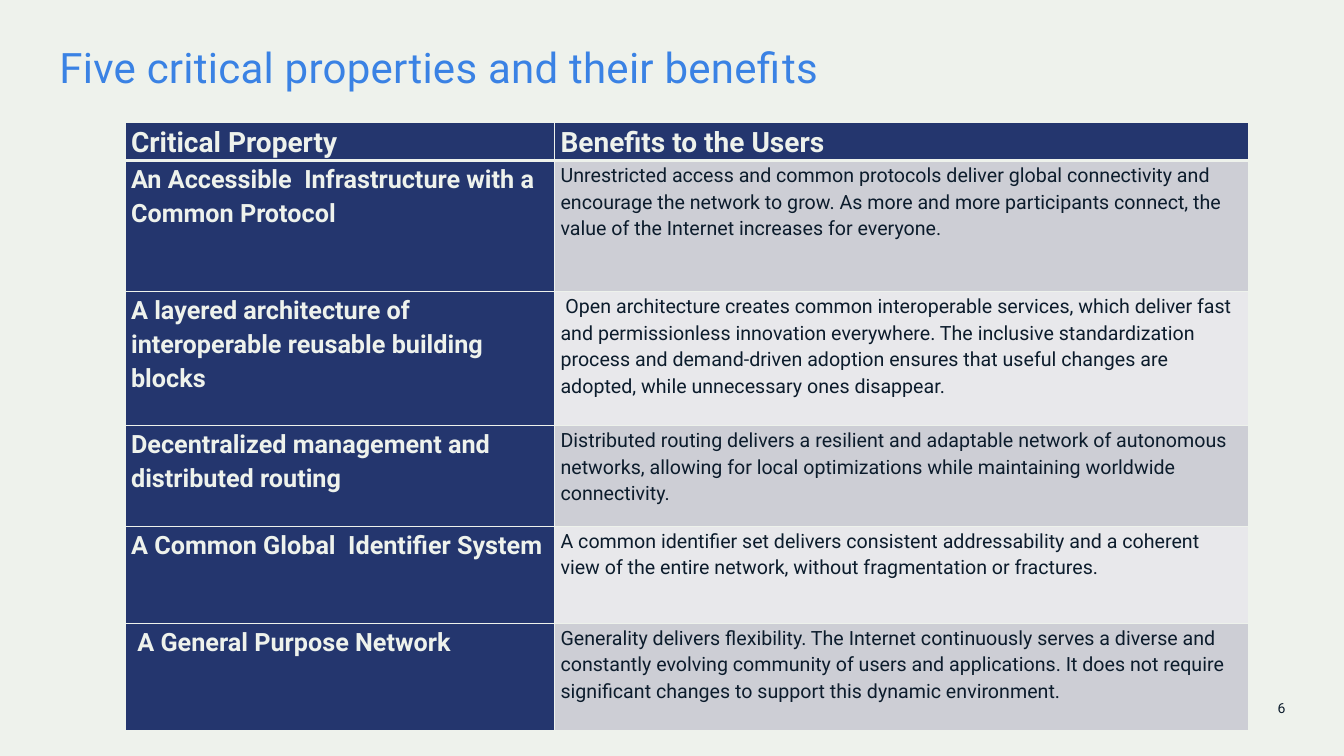
from lxml import etree
from pptx import Presentation
from pptx.dml.color import RGBColor
from pptx.enum.text import PP_ALIGN as Align
from pptx.oxml.ns import qn
from pptx.util import Inches, Pt

PAPER, NAVY, INK, BLUE = "EEF2EC", "24366E", "0C1C2C", "3A82E4"
BANDS = ("CDCED5", "E8E8EB")
FONT = "Roboto"
HEADER = ("Critical Property", "Benefits to the Users")
PROPERTIES = [
    ("An Accessible  Infrastructure with a Common Protocol",
     "Unrestricted access and common protocols deliver global connectivity and "
     "encourage the network to grow. As more and more participants connect, the "
     "value of the Internet increases for everyone."),
    ("A layered architecture of interoperable reusable building blocks",
     " Open architecture creates common interoperable services, which deliver fast "
     "and permissionless innovation everywhere. The inclusive standardization "
     "process and demand-driven adoption ensures that useful changes are "
     "adopted, while unnecessary ones disappear."),
    ("Decentralized management and distributed routing",
     "Distributed routing delivers a resilient and adaptable network of autonomous "
     "networks, allowing for local optimizations while maintaining worldwide "
     "connectivity."),
    ("A Common Global  Identifier System",
     "A common identifier set delivers consistent addressability and a coherent "
     "view of the entire network, without fragmentation or fractures."),
    (" A General Purpose Network",
     "Generality delivers flexibility. The Internet continuously serves a diverse and "
     "constantly evolving community of users and applications. It does not require "
     "significant changes to support this dynamic environment."),
]
COLUMN_WIDTHS = (4.26, 6.88)
ROW_HEIGHTS = (0.26, 1.3, 1.33, 1, 0.96, 1.06)


def rgb(color):
    return RGBColor.from_string(color)


def style(paragraph, size, color, bold=False, spacing=1.0):
    paragraph.line_spacing = spacing
    font = paragraph.font
    font.name, font.size, font.bold = FONT, Pt(size), bold
    font.color.rgb = rgb(color)


def add_line(slide, box, text, size, color, align=Align.LEFT, spacing=1.0):
    """Place one paragraph in a box without margins."""
    frame = slide.shapes.add_textbox(*map(Inches, box)).text_frame
    frame.word_wrap = True
    frame.margin_left = frame.margin_top = frame.margin_right = frame.margin_bottom = 0
    paragraph = frame.paragraphs[0]
    paragraph.text, paragraph.alignment = text, align
    style(paragraph, size, color, spacing=spacing)
    return paragraph


def add_title(slide, box):
    title = add_line(slide, box, "Five critical properties and their benefits",
                     30, BLUE, spacing=1.06)
    title.runs[0].font._element.set("spc", "20")


def set_borders(cell, bottom):
    """Draw the four cell borders; they must precede the fill in the XML."""
    properties = cell._tc.get_or_add_tcPr()
    widths = {"lnL": 1, "lnR": 1, "lnT": 1, "lnB": bottom}
    for index, (side, width) in enumerate(widths.items()):
        border = etree.Element(qn(f"a:{side}"), w=str(Pt(width)))
        fill = etree.SubElement(border, qn("a:solidFill"))
        etree.SubElement(fill, qn("a:srgbClr"), val=PAPER)
        properties.insert(index, border)


def fill_cell(cell, text, size, color, fill, bold, bottom):
    cell.margin_left = cell.margin_right = Inches(0.06)
    cell.margin_top = cell.margin_bottom = 0
    cell.text = text
    style(cell.text_frame.paragraphs[0], size, color, bold, 1.15)
    cell.fill.solid()
    cell.fill.fore_color.rgb = rgb(fill)
    set_borders(cell, bottom)


def add_benefits_table(slide, box):
    table = slide.shapes.add_table(len(ROW_HEIGHTS), len(COLUMN_WIDTHS),
                                   *map(Inches, box)).table
    for column, width in zip(table.columns, COLUMN_WIDTHS):
        column.width = Inches(width)
    for row, height in zip(table.rows, ROW_HEIGHTS):
        row.height = Inches(height)
    for column, heading in enumerate(HEADER):
        fill_cell(table.cell(0, column), heading, 20, PAPER, NAVY, True, 3)
    for row, (name, benefit) in enumerate(PROPERTIES, start=1):
        fill_cell(table.cell(row, 0), name, 18, PAPER, NAVY, True, 1)
        fill_cell(table.cell(row, 1), benefit, 14, INK, BANDS[(row - 1) % 2], False, 1)
    # The header's lower rule is shared with the first body row.
    for cell in table.rows[1].cells:
        cell._tc.tcPr.find(qn("a:lnT")).set("w", str(Pt(3)))


def main():
    deck = Presentation()
    deck.slide_width, deck.slide_height = Inches(13.33), Inches(7.5)
    slide = deck.slides.add_slide(deck.slide_layouts[6])
    slide.background.fill.solid()
    slide.background.fill.fore_color.rgb = rgb(PAPER)
    add_line(slide, (9.75, 6.94, 3, 0.19), "6", 10, INK, Align.RIGHT)
    add_title(slide, (0.59, 0.38, 12.16, 0.59))
    add_benefits_table(slide, (1.24, 1.21, sum(COLUMN_WIDTHS), sum(ROW_HEIGHTS)))
    deck.save("out.pptx")


if __name__ == "__main__":
    main()
